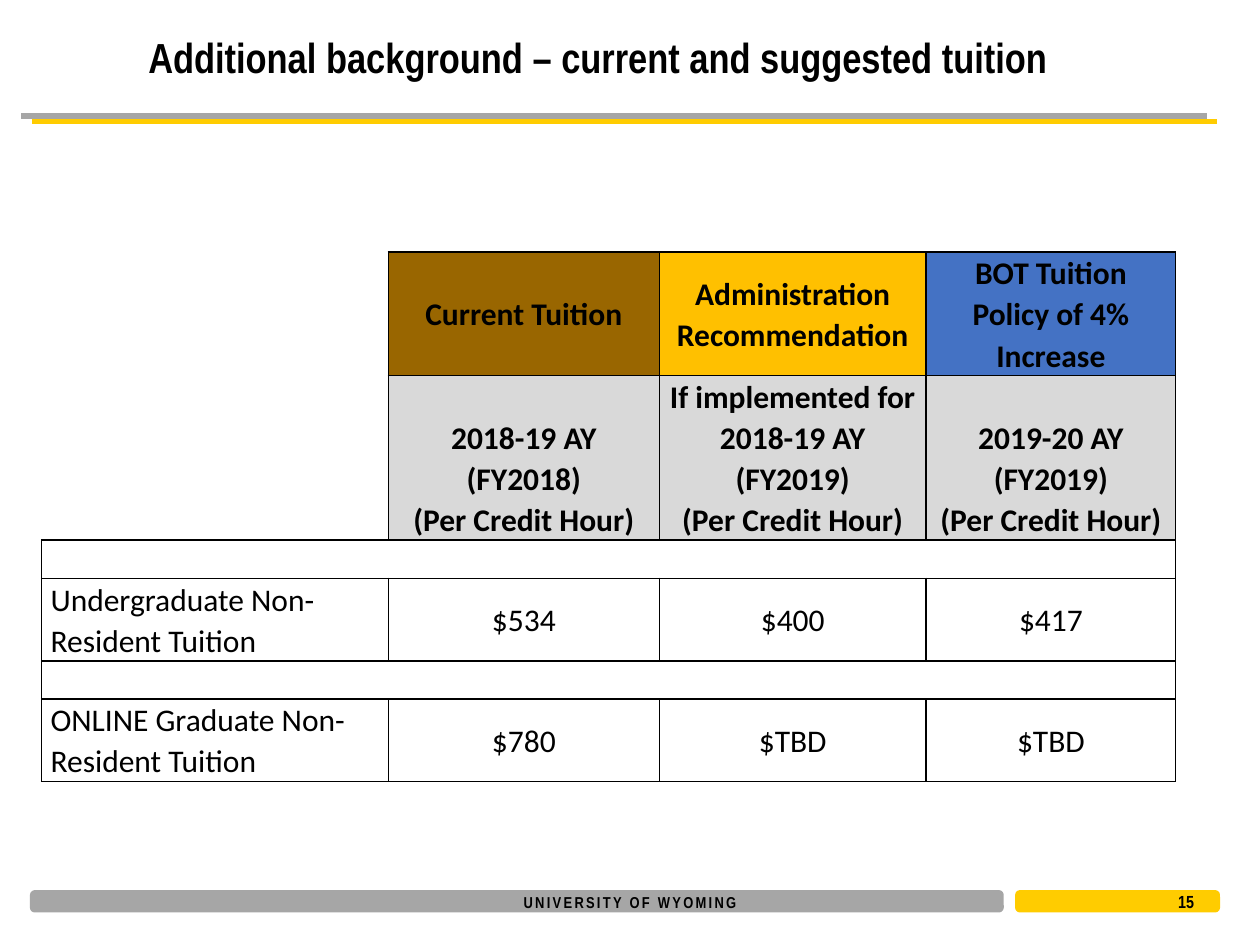
from lxml import etree
from pptx import Presentation
from pptx.dml.color import RGBColor
from pptx.enum.shapes import MSO_CONNECTOR, MSO_SHAPE
from pptx.enum.text import MSO_ANCHOR, PP_ALIGN
from pptx.oxml.ns import qn
from pptx.util import Cm, Pt

STRAIGHT = MSO_CONNECTOR.STRAIGHT
ROUNDED = MSO_SHAPE.ROUNDED_RECTANGLE
MIDDLE, BOTTOM = MSO_ANCHOR.MIDDLE, MSO_ANCHOR.BOTTOM
LEFT, CENTER = PP_ALIGN.LEFT, PP_ALIGN.CENTER

TITLE = "Additional background – current and suggested tuition"
FOOTER = "UNIVERSITY OF WYOMING"
PAGE_NUMBER = "15"

# One list per table row; an empty list is a merged spacer row.
ROWS = [
    ["", "Current Tuition", "Administration Recommendation",
     "BOT Tuition Policy of 4% Increase"],
    ["", "2018-19 AY\n(FY2018)", "If implemented for 2018-19 AY\n(FY2019)",
     "2019-20 AY\n(FY2019)"],
    ["", *["(Per Credit Hour)"] * 3],
    [],
    ["Undergraduate Non-Resident Tuition", "$534", "$400", "$417"],
    [],
    ["ONLINE Graduate Non-Resident Tuition", "$780", "$TBD", "$TBD"],
]
HEADER_ROWS = 3
COLUMN_WIDTHS = [6.99, 5.46, 5.38, 5.03]
ROW_HEIGHTS = [2.49, 2.49, 0.83, 0.77, 1.66, 0.77, 1.66]

THEME = {
    "heading_font": "Arial Narrow", "table_font": "Calibri",
    "title_size": 24, "table_size": 18, "footer_size": 9, "number_size": 10,
    "text": "000000", "border": "000000", "gray": "A6A6A6", "gold": "FFCC00",
    "column_heads": ["996600", "FFC000", "4472C4"], "subhead": "D9D9D9",
}


def color(name):
    return RGBColor.from_string(name)


def add_run(para, text, font, size, bold=True):
    span = para.add_run()
    span.text = text
    span.font.name = font
    span.font.size = Pt(size)
    span.font.bold = bold
    span.font.color.rgb = color(THEME["text"])
    return span


def add_label(page, text, bounds, size, align=LEFT):
    box = page.shapes.add_textbox(*(Cm(length) for length in bounds))
    frame = box.text_frame
    frame.word_wrap = True
    frame.vertical_anchor = MIDDLE
    para = frame.paragraphs[0]
    para.alignment = align
    return add_run(para, text, THEME["heading_font"], size)


def add_bar(page, left, width, fill):
    bar = page.shapes.add_shape(ROUNDED, Cm(left), Cm(17.98), Cm(width), Cm(0.38))
    bar.shadow.inherit = False
    bar.fill.solid()
    bar.fill.fore_color.rgb = color(fill)
    bar.line.color.rgb = color(fill)
    bar.line.width = Pt(2)


def add_title_rule(page):
    """Gray line whose hard gold shadow forms the second stripe."""
    rule = page.shapes.add_connector(STRAIGHT, Cm(0.43), Cm(2.34), Cm(24.33), Cm(2.34))
    rule.line.color.rgb = color(THEME["gray"])
    rule.line.width = Pt(3)
    effects = etree.SubElement(rule._element.spPr, qn("a:effectLst"))
    shadow = etree.SubElement(effects, qn("a:outerShdw"), blurRad="0",
                              dist=str(Pt(6.7)), dir=str(27 * 60000),
                              algn="ctr", rotWithShape="0")
    etree.SubElement(shadow, qn("a:srgbClr"), val=THEME["gold"])


def border_sides(row, column):
    """Sides drawn: the corner block is open, the two subhead rows read as one."""
    if row >= HEADER_ROWS or (row == 0 and column > 0):
        return "LRTB"
    if column == 0:
        return "RB" if row == HEADER_ROWS - 1 else "R"
    return "LRT" if row == 1 else "LRB"


def set_borders(cell, sides):
    properties = cell._tc.get_or_add_tcPr()
    for position, side in enumerate("LRTB"):
        line = etree.Element(qn(f"a:ln{side}"), w=str(Pt(1)))
        if side in sides:
            fill = etree.SubElement(line, qn("a:solidFill"))
            etree.SubElement(fill, qn("a:srgbClr"), val=THEME["border"])
        else:
            etree.SubElement(line, qn("a:noFill"))
        properties.insert(position, line)


def fill_cell(cell, row, column, text):
    is_header = row < HEADER_ROWS
    cell.margin_left = cell.margin_right = Cm(0.18)
    cell.margin_top = cell.margin_bottom = 0
    cell.vertical_anchor = BOTTOM if row == 1 else MIDDLE
    if is_header and column > 0:
        cell.fill.solid()
        fill = THEME["column_heads"][column - 1] if row == 0 else THEME["subhead"]
        cell.fill.fore_color.rgb = color(fill)
    else:
        cell.fill.background()
    set_borders(cell, border_sides(row, column))
    if not text:
        return
    frame = cell.text_frame
    for index, line in enumerate(text.split("\n")):
        para = frame.add_paragraph() if index else frame.paragraphs[0]
        para.alignment = CENTER if column else LEFT
        para.line_spacing = 1.07
        add_run(para, line, THEME["table_font"], THEME["table_size"], is_header)


def add_tuition_table(page):
    table = page.shapes.add_table(
        len(ROWS), len(COLUMN_WIDTHS), Cm(0.84), Cm(5.08),
        Cm(sum(COLUMN_WIDTHS)), Cm(sum(ROW_HEIGHTS))).table
    table.first_row = table.horz_banding = False
    for column, width in zip(table.columns, COLUMN_WIDTHS):
        column.width = Cm(width)
    last = len(COLUMN_WIDTHS) - 1
    for row, texts in enumerate(ROWS):
        table.rows[row].height = Cm(ROW_HEIGHTS[row])
        for column, text in enumerate(texts or [""] * len(COLUMN_WIDTHS)):
            fill_cell(table.cell(row, column), row, column, text)
        if not texts:
            table.cell(row, 0).merge(table.cell(row, last))


def main():
    deck = Presentation()
    deck.slide_width, deck.slide_height = Cm(25.4), Cm(19.05)
    page = deck.slides.add_slide(deck.slide_layouts[6])
    add_title_rule(page)
    add_bar(page, 0.64, 19.56, THEME["gray"])
    add_bar(page, 20.5, 4.06, THEME["gold"])
    footer = add_label(page, FOOTER, (9.9, 17.86, 5.6, 0.64),
                       THEME["footer_size"], CENTER)
    footer._r.get_or_add_rPr().set("spc", "130")
    add_label(page, TITLE, (2.74, 0.38, 22.23, 1.52), THEME["title_size"])
    add_label(page, PAGE_NUMBER, (23.5, 17.93, 1.27, 0.48), THEME["number_size"])
    add_tuition_table(page)
    deck.save("out.pptx")


if __name__ == "__main__":
    main()
